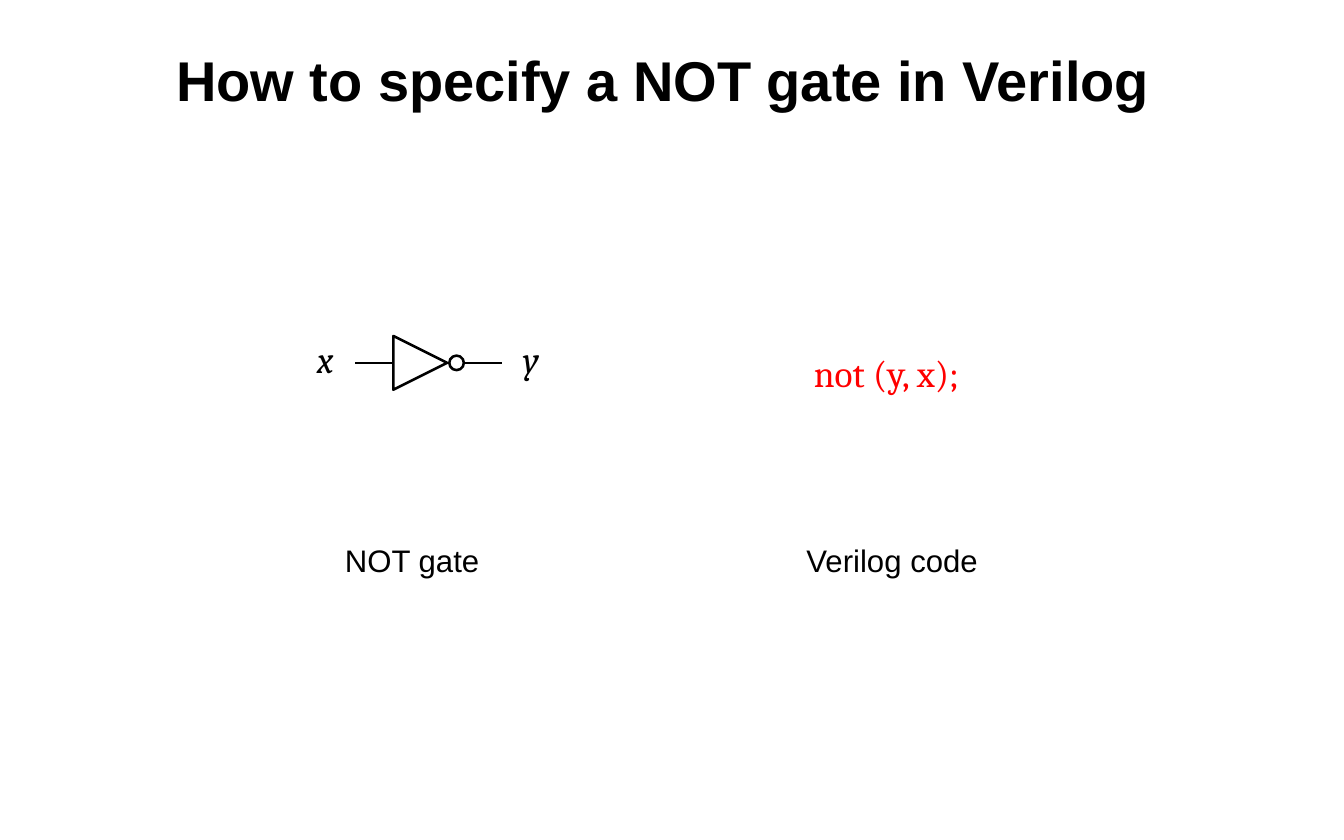
from dataclasses import dataclass

from lxml.etree import SubElement
from pptx import Presentation
from pptx.dml.color import RGBColor
from pptx.enum.shapes import MSO_CONNECTOR, MSO_SHAPE
from pptx.enum.text import MSO_ANCHOR, MSO_AUTO_SIZE, PP_ALIGN
from pptx.oxml.ns import qn
from pptx.util import Cm, Pt


@dataclass(frozen=True)
class Theme:
    ink: RGBColor = RGBColor(0, 0, 0)
    code: RGBColor = RGBColor(255, 0, 0)
    sans: str = "Arial"
    serif: str = "Cambria"
    title_size: float = 36
    symbol_size: float = 24
    caption_size: float = 20
    stroke: float = 1.63


THEME = Theme()
TITLE = dict(name=THEME.sans, size=Pt(THEME.title_size), bold=True)
SIGNAL = dict(name=THEME.serif, size=Pt(THEME.symbol_size), italic=True)
CODE = dict(name=THEME.serif, size=Pt(THEME.symbol_size))
CAPTION = dict(name=THEME.sans, size=Pt(THEME.caption_size))
NO_INSETS = dict(margin_left=0, margin_top=0, margin_right=0, margin_bottom=0)


def apply(target, values):
    for name, value in values.items():
        setattr(target, name, value)


def write(frame, text, font, color=THEME.ink, **layout):
    apply(frame, layout)
    paragraph = frame.paragraphs[0]
    run = paragraph.add_run()
    run.text = text
    apply(run.font, font)
    run.font.color.rgb = color
    return paragraph


def add_label(shapes, box, text, font, color=THEME.ink, **layout):
    label = shapes.add_textbox(*map(Cm, box))
    write(label.text_frame, text, font, color, word_wrap=False, **layout)


def outline(part):
    part.line.color.rgb = THEME.ink
    part.line.width = Pt(THEME.stroke)


def add_wire(shapes, start, end, y):
    wire = shapes.add_connector(MSO_CONNECTOR.STRAIGHT, Cm(start), Cm(y), Cm(end), Cm(y))
    outline(wire)
    SubElement(wire.line._get_or_add_ln().getparent(), qn("a:effectLst"))


def add_outlined_shape(shapes, kind, left, middle, size):
    part = shapes.add_shape(kind, Cm(left), Cm(middle - size / 2), Cm(size), Cm(size))
    part.shadow.inherit = False
    part.fill.background()
    outline(part)
    return part


def place_title(slide, box):
    title = slide.shapes.title
    apply(title, dict(zip(("left", "top", "width", "height"), map(Cm, box))))
    heading = write(title.text_frame, "How to specify a NOT gate in Verilog", TITLE,
                    word_wrap=True, auto_size=MSO_AUTO_SIZE.NONE,
                    vertical_anchor=MSO_ANCHOR.MIDDLE)
    heading.alignment = PP_ALIGN.CENTER


def draw_not_gate(slide, box):
    left, top, width, height = box
    label_width, label_height = 0.56, 1.02
    body, bubble, lead = height, 0.33, 0.86
    middle = top + height / 2
    body_left = left + 1.73
    bubble_left = body_left + body + 0.05
    bubble_right = bubble_left + bubble
    gate = slide.shapes.add_group_shape().shapes

    # Wires on both sides of the gate
    add_wire(gate, body_left - lead, body_left, middle)
    add_wire(gate, bubble_right, bubble_right + lead, middle)

    # Inverter body and bubble
    triangle = add_outlined_shape(gate, MSO_SHAPE.ISOSCELES_TRIANGLE, body_left, middle, body)
    triangle.rotation = 90
    add_outlined_shape(gate, MSO_SHAPE.OVAL, bubble_left, middle, bubble)

    # Signal names
    for signal, x in (("x", left), ("y", left + width - label_width)):
        add_label(gate, (x, top, label_width, label_height), signal, SIGNAL, **NO_INSETS)


def place_code(slide, box):
    add_label(slide.shapes, box, "not (y, x);", CODE, THEME.code)


def place_captions(slide, box):
    left, top, width, height = box
    caption_width = 3.91
    for caption, x in (("NOT gate", left), ("Verilog code", left + width - caption_width)):
        add_label(slide.shapes, (x, top, caption_width, height), caption, CAPTION, **NO_INSETS)


def main():
    deck = Presentation()
    deck.slide_width, deck.slide_height = Cm(30.48), Cm(19.05)
    slide = deck.slides.add_slide(deck.slide_layouts.get_by_name("Title Only"))
    place_title(slide, (2.34, 0.84, 25.4, 1.9))
    draw_not_gate(slide, (7.19, 7.62, 5.23, 1.22))
    place_code(slide, (18.21, 7.82, 3.86, 1.3))
    place_captions(slide, (7.82, 12.27, 14.38, 0.86))
    deck.save("out.pptx")


if __name__ == "__main__":
    main()
